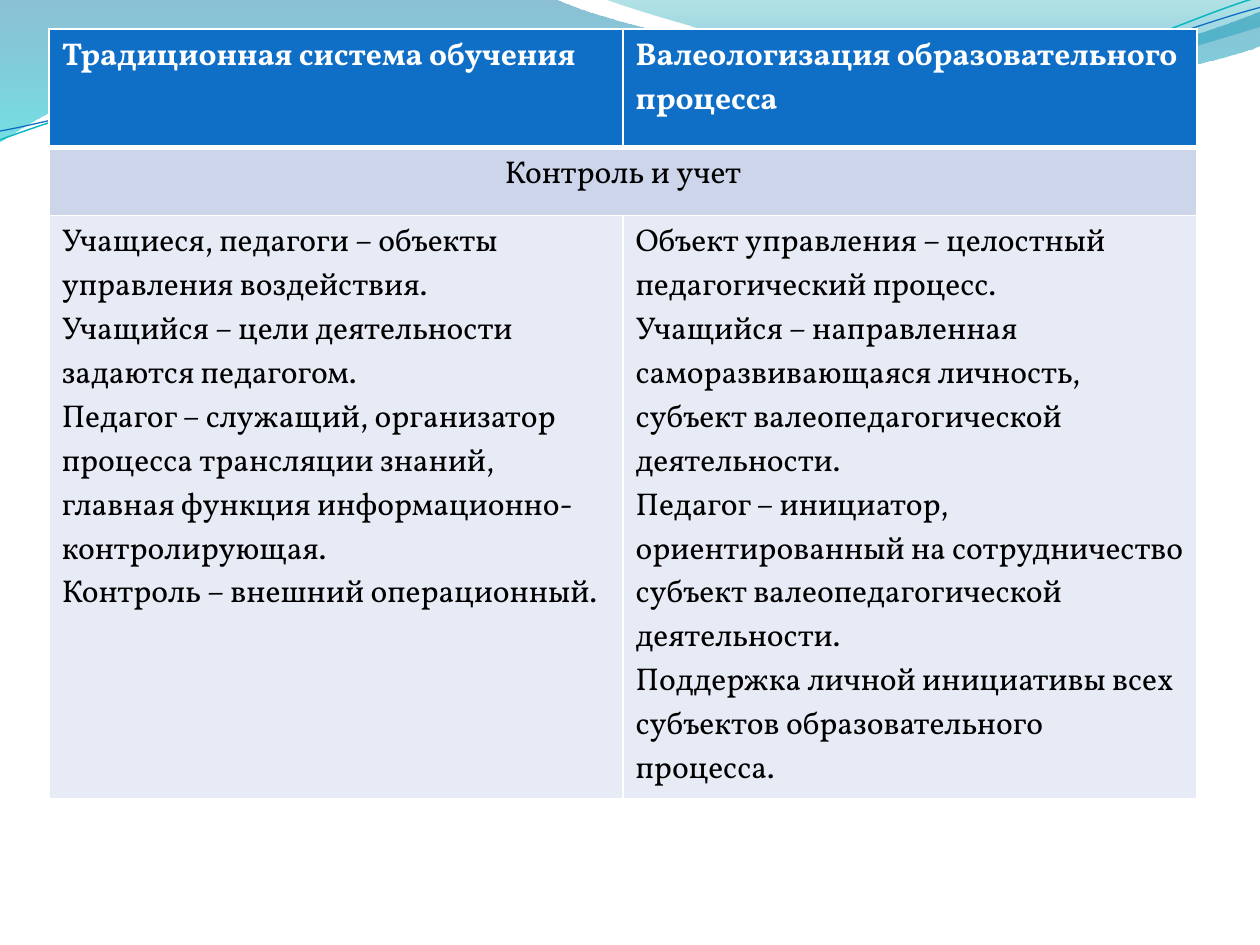
from dataclasses import dataclass
from math import cos, radians, sin

from lxml.etree import SubElement
from pptx import Presentation
from pptx.dml.color import RGBColor
from pptx.enum.text import PP_ALIGN
from pptx.oxml.ns import qn
from pptx.util import Inches, Pt


@dataclass(frozen=True)
class Theme:
    font: str = "Vollkorn"
    size: float = 18
    white: str = "FFFFFF"
    black: str = "000000"
    blue: str = "0F6FC6"
    teal: str = "0AB8BF"
    band: str = "CCD5EA"
    body: str = "E7EBF5"
    # Gradient stops: position, colour, opacity (all but colour in percent)
    wave_back: tuple = ((0, "0074A1", 45), (100, "00C6CF", 55))
    wave_front: tuple = ((0, "00A1A9", 30), (80, "008BBF", 45))


THEME = Theme()
TILT = 357.3

# Outlines: a pair is a straight step, six numbers are a Bezier step
WAVE_BACK = [
    (0, 0), (4.4, -0.01),
    (4.76, 0.17, 6.64, 0.63, 7.58, 0.63), (8.53, 0.63, 9.58, 0.26, 10, 0.09),
    (10.01, 0.36),
    (9.83, 0.44, 8.7, 0.76, 7.46, 0.75), (6.22, 0.75, 3.82, 0.28, 2.57, 0.34),
    (1.29, 0.36, 0.46, 0.83, -0.01, 1.13), (0, 0),
]
WAVE_FRONT = [
    (4.79, -0.01), (5.09, 0.11, 6.82, 0.62, 7.69, 0.65),
    (8.56, 0.69, 9.61, 0.32, 10, 0.21), (10, 0), (4.79, -0.01),
]
TEAL_CURVE = [
    (0, 1.11), (0.48, 0.93, 1.58, 0.57, 2.77, 0.52),
    (3.95, 0.47, 5.93, 0.89, 7.13, 0.8), (8.33, 0.71, 9.38, 0.15, 9.98, -0.02),
]
BLUE_CURVE = [
    (0, 1.04), (0.47, 0.96, 1.64, 0.61, 2.83, 0.56),
    (4.03, 0.51, 5.97, 0.84, 7.17, 0.75), (8.36, 0.67, 9.41, 0.21, 10, 0.06),
]

HEADERS = ["Традиционная система обучения",
           "Валеологизация образовательного процесса"]
SECTION = "Контроль и учет"
TRADITIONAL = [
    "Учащиеся, педагоги – объекты управления воздействия.",
    "Учащийся – цели деятельности задаются педагогом.",
    "Педагог – служащий, организатор процесса трансляции знаний, "
    "главная функция информационно-контролирующая.",
    "Контроль – внешний операционный.",
]
VALEOLOGICAL = [
    "Объект управления – целостный педагогический процесс.",
    "Учащийся – направленная саморазвивающаяся личность, "
    "субъект валеопедагогической деятельности.",
    "Педагог – инициатор, ориентированный на сотрудничество "
    "субъект валеопедагогической деятельности.",
    "Поддержка личной инициативы всех субъектов образовательного процесса.",
]


def rgb(color):
    return RGBColor.from_string(color)


def turn(step, center, degrees):
    """Rotate every point of one outline step about the center."""
    cx, cy = center
    c, n = cos(radians(degrees)), sin(radians(degrees))
    turned = []
    for x, y in zip(step[::2], step[1::2]):
        turned += [cx + (x - cx) * c - (y - cy) * n,
                   cy + (x - cx) * n + (y - cy) * c]
    return tuple(turned)


def add_outline(s, steps, close):
    emu = [(Inches(x), Inches(y)) for step in steps
           for x, y in zip(step[::2], step[1::2])]
    builder = s.shapes.build_freeform(*emu[0])
    builder.add_line_segments(emu[1:], close=close)
    sp = builder.convert_to_shape()
    sp.shadow.inherit = False

    # Join each three points of a Bezier step into one curve
    segments = iter(list(sp._element.iter(qn("a:lnTo"))))
    for step in steps[1:]:
        line = next(segments)
        if len(step) == 6:
            line.addprevious(curve := line.makeelement(qn("a:cubicBezTo")))
            for part in (line, next(segments), next(segments)):
                curve.append(part[0])
                part.getparent().remove(part)
    return sp


def add_wave(s, steps, stops):
    sp = add_outline(s, steps, close=True)
    sp.line.fill.background()
    sp.fill.gradient()
    grad = sp._element.spPr.find(qn("a:gradFill"))
    for child in list(grad):
        grad.remove(child)
    stop_list = SubElement(grad, qn("a:gsLst"))
    for position, color, opacity in stops:
        stop = SubElement(stop_list, qn("a:gs"), pos=str(position * 1000))
        clr = SubElement(stop, qn("a:srgbClr"), val=color)
        SubElement(clr, qn("a:alpha"), val=str(opacity * 1000))
    SubElement(grad, qn("a:lin"), ang="5400000", scaled="0")


def add_curve(s, steps, center, color, width):
    level = [turn(step, center, -TILT) for step in steps]
    sp = add_outline(s, level, close=False)
    sp.rotation = TILT
    sp.fill.background()
    sp.line.color.rgb = rgb(color)
    sp.line.width = Pt(width)


def set_borders(cell, top=1, bottom=1):
    tc_pr = cell._tc.get_or_add_tcPr()
    for side, width in (("L", 1), ("R", 1), ("T", top), ("B", bottom)):
        ln = SubElement(tc_pr, qn(f"a:ln{side}"), w=str(Pt(width)))
        fill = SubElement(ln, qn("a:solidFill"))
        SubElement(fill, qn("a:srgbClr"), val=THEME.white)


def fill_cell(cell, lines, fill, color=THEME.black, bold=False,
              align=PP_ALIGN.LEFT, **borders):
    set_borders(cell, **borders)
    cell.fill.solid()
    cell.fill.fore_color.rgb = rgb(fill)
    tf = cell.text_frame
    for i, line in enumerate(lines):
        p = tf.add_paragraph() if i else tf.paragraphs[0]
        p.alignment = align
        r = p.add_run()
        r.text = line
        r.font.name = THEME.font
        r.font.size = Pt(THEME.size)
        r.font.bold = bold
        r.font.color.rgb = rgb(color)


def add_comparison(s):
    table = s.shapes.add_table(3, 2, Inches(0.39), Inches(0.23),
                               Inches(9.11), Inches(6.02)).table
    for row, height in zip(table.rows, (0.94, 0.54, 4.54)):
        row.height = Inches(height)

    # Header row
    for col, text in enumerate(HEADERS):
        fill_cell(table.cell(0, col), [text], THEME.blue, THEME.white,
                  bold=True, bottom=3)
    # Section row across both columns
    section = table.cell(1, 0)
    section.merge(table.cell(1, 1))
    fill_cell(section, [SECTION], THEME.band, align=PP_ALIGN.CENTER, top=3)
    # Body row
    for col, lines in enumerate((TRADITIONAL, VALEOLOGICAL)):
        fill_cell(table.cell(2, col), lines, THEME.body)


def main():
    prs = Presentation()
    prs.slide_width, prs.slide_height = Inches(10), Inches(7.5)
    s = prs.slides.add_slide(prs.slide_layouts[6])
    s.background.fill.solid()
    s.background.fill.fore_color.rgb = rgb(THEME.white)

    # Waves along the top edge
    add_wave(s, WAVE_BACK, THEME.wave_back)
    add_wave(s, WAVE_FRONT, THEME.wave_front)
    add_curve(s, TEAL_CURVE, (4.99, 0.58), THEME.teal, 0.85)
    add_curve(s, BLUE_CURVE, (5, 0.59), THEME.blue, 0.75)

    add_comparison(s)
    prs.save("out.pptx")


if __name__ == "__main__":
    main()
